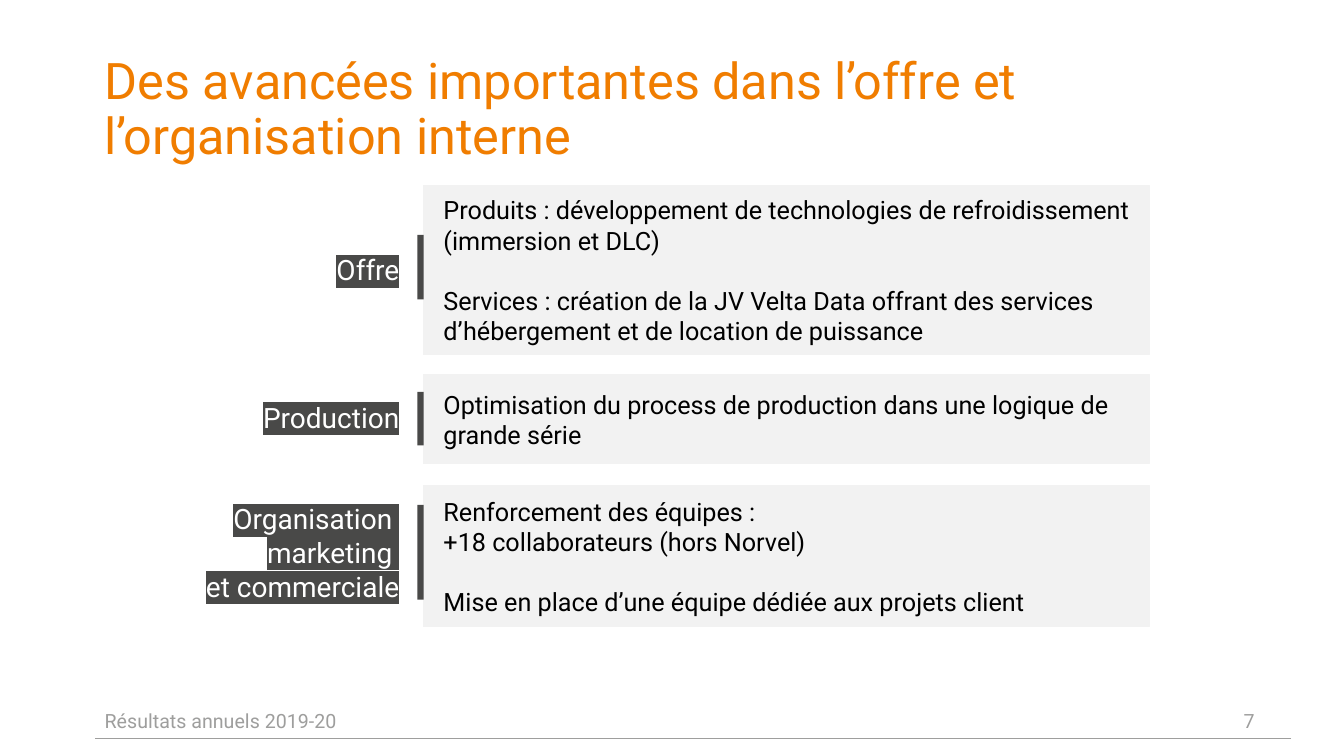
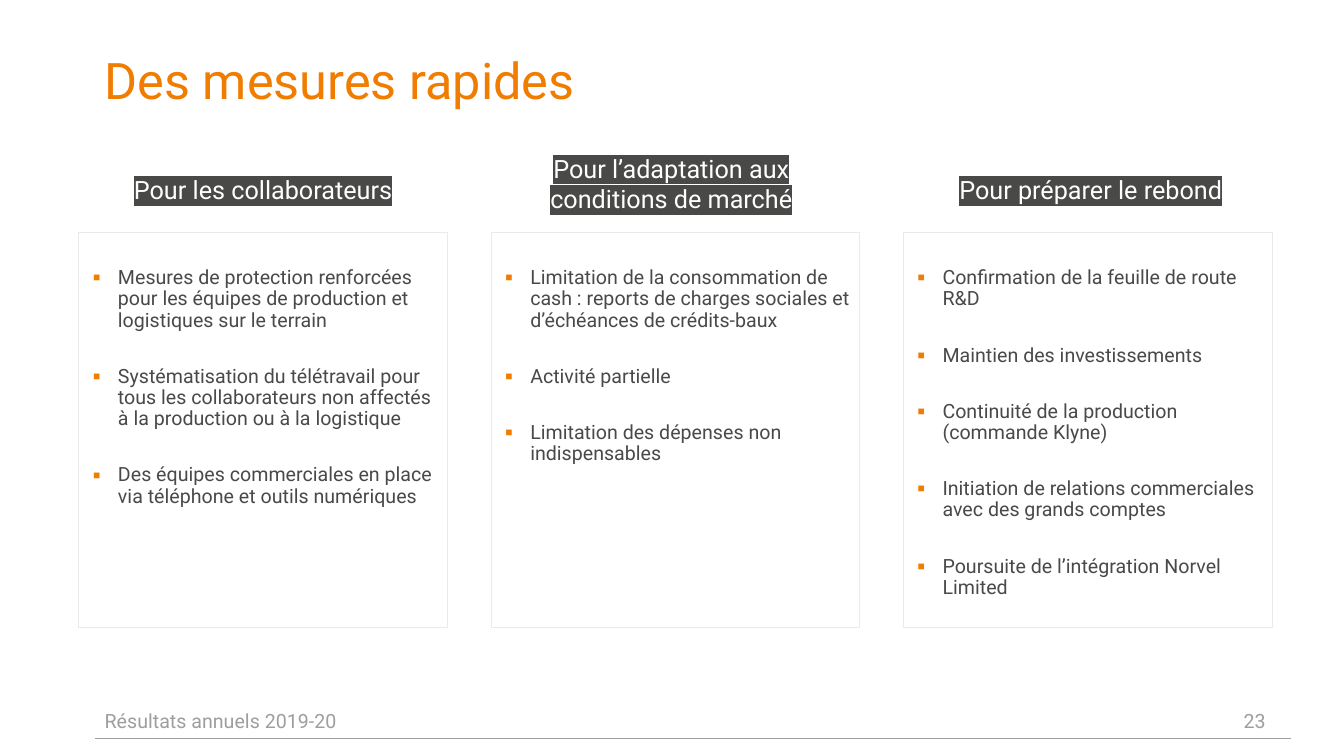
from lxml import etree
from pptx import Presentation
from pptx.dml.color import RGBColor
from pptx.enum.shapes import MSO_CONNECTOR, MSO_SHAPE
from pptx.enum.text import MSO_ANCHOR, PP_ALIGN
from pptx.oxml.ns import qn
from pptx.util import Pt

ORANGE = RGBColor(0xF0, 0x7D, 0x00)
DARK = RGBColor(0x49, 0x49, 0x48)
GREY = RGBColor(0x9E, 0x9E, 0x9D)
PALE = RGBColor(0xF2, 0xF2, 0xF2)
BORDER = RGBColor(0xEA, 0xEA, 0xEB)
WHITE = RGBColor(0xFF, 0xFF, 0xFF)
BLACK = RGBColor(0x00, 0x00, 0x00)
FONT = "Roboto"
FOOTER = "Résultats annuels 2019-20"
RECTANGLE = MSO_SHAPE.RECTANGLE
STRAIGHT = MSO_CONNECTOR.STRAIGHT
TOP, MIDDLE = MSO_ANCHOR.TOP, MSO_ANCHOR.MIDDLE
LEFT, CENTER, RIGHT = PP_ALIGN.LEFT, PP_ALIGN.CENTER, PP_ALIGN.RIGHT
INSETS = (7.2, 3.6, 7.2, 3.6)

ADVANCES = [
    {"label": "Offre", "box": (302.4, 132.5, 518.4, 121),
     "label_offset": 44.6, "mark": (35.3, 46),
     "points": ["Produits : développement de technologies de refroidissement (immersion et DLC)",
                "Services : création de la JV Velta Data offrant des services "
                "d’hébergement et de location de puissance"]},
    {"label": "Production", "box": (302.4, 267.8, 518.4, 63.4),
     "label_offset": 14.4, "mark": (12.2, 38.2),
     "points": ["Optimisation du process de production dans une logique de grande série"]},
    {"label": "Organisation \nmarketing \net commerciale", "box": (302.4, 347, 518.4, 100.8),
     "label_offset": 7.9, "mark": (13.7, 67.7),
     "points": ["Renforcement des équipes : \n+18 collaborateurs (hors Norvel)",
                "Mise en place d’une équipe dédiée aux projets client"]},
]

MEASURES = [
    {"heading": "Pour les collaborateurs", "heading_offset": (29.5, -45.4),
     "points": ["Mesures de protection renforcées pour les équipes de production "
                "et logistiques sur le terrain",
                "Systématisation du télétravail pour tous les collaborateurs non affectés "
                "à la production ou à la logistique",
                "Des équipes commerciales en place via téléphone et outils numériques"]},
    {"heading": "Pour l’adaptation aux conditions de marché", "heading_offset": (26.6, -60.5),
     "points": ["Limitation de la consommation de cash : reports de charges sociales "
                "et d’échéances de crédits-baux",
                "Activité partielle",
                "Limitation des dépenses non indispensables"]},
    {"heading": "Pour préparer le rebond", "heading_offset": (31.7, -45.4),
     "points": ["Confirmation de la feuille de route R&D",
                "Maintien des investissements",
                "Continuité de la production (commande Klyne)",
                "Initiation de relations commerciales avec des grands comptes",
                "Poursuite de l’intégration Norvel Limited"]},
]


def add_panel(slide, box, fill=None, line=None, weight=0.75):
    """Draw a rectangle with an optional fill and outline."""
    panel = slide.shapes.add_shape(RECTANGLE, *map(Pt, box))
    panel.shadow.inherit = False
    if fill is None:
        panel.fill.background()
    else:
        panel.fill.solid()
        panel.fill.fore_color.rgb = fill
    if line is None:
        panel.line.fill.background()
    else:
        panel.line.color.rgb = line
        panel.line.width = Pt(weight)
    return panel


def write(shape, texts, size, color, align=LEFT, anchor=TOP, insets=INSETS,
          gap=0, spacing=None, highlight=None):
    """Fill a shape with paragraphs set apart by a gap."""
    frame = shape.text_frame
    frame.word_wrap = True
    frame.vertical_anchor = anchor
    (frame.margin_left, frame.margin_top,
     frame.margin_right, frame.margin_bottom) = map(Pt, insets)
    for index, text in enumerate(texts):
        paragraph = frame.add_paragraph() if index else frame.paragraphs[0]
        paragraph.alignment = align
        paragraph.space_before = Pt(gap if index else 0)
        if spacing:
            paragraph.line_spacing = spacing
        for number, line in enumerate(text.split("\n")):
            if number:
                paragraph.add_line_break()
            run = paragraph.add_run()
            run.text = line
            run.font.size = Pt(size)
            run.font.name = FONT
            run.font.color.rgb = color
            if highlight is not None:
                mark = etree.Element(qn("a:highlight"))
                etree.SubElement(mark, qn("a:srgbClr"), val=str(highlight))
                run.font.fill._xPr.find(qn("a:solidFill")).addnext(mark)
    return frame


def add_text(slide, box, text, size, color, **style):
    """Place a text box holding one paragraph."""
    write(slide.shapes.add_textbox(*map(Pt, box)), [text], size, color, **style)


def add_bullets(frame):
    """Give every paragraph a hanging orange square."""
    for paragraph in frame.paragraphs:
        properties = paragraph._p.get_or_add_pPr()
        properties.set("marL", str(Pt(21)))
        properties.set("indent", str(-Pt(18)))
        bullet_color = etree.SubElement(properties, qn("a:buClr"))
        etree.SubElement(bullet_color, qn("a:srgbClr"), val=str(ORANGE))
        etree.SubElement(properties, qn("a:buFont"), typeface=FONT)
        etree.SubElement(properties, qn("a:buChar"), char="▪")


def add_frame(deck, title, number):
    """Start a slide with its title, footer and rule."""
    slide = deck.slides.add_slide(deck.slide_layouts[6])
    rule = slide.shapes.add_connector(STRAIGHT, Pt(922.3), Pt(527), Pt(67.7), Pt(527))
    rule.line.color.rgb = GREY
    rule.line.width = Pt(0.25)
    etree.SubElement(rule._element.spPr, qn("a:effectLst"))
    add_text(slide, (67.7, 36.7, 860, 51.8), title, 36, ORANGE, spacing=0.9)
    add_text(slide, (67.7, 500.4, 602.6, 28.8), FOOTER, 14, GREY, anchor=MIDDLE)
    add_text(slide, (881.3, 500.4, 41, 28.8), str(number), 14, GREY, anchor=MIDDLE)
    return slide


def add_advance(slide, advance):
    """Place a grey panel with its label and dark mark on the left."""
    left, top, _, _ = advance["box"]
    mark_offset, mark_height = advance["mark"]
    panel = add_panel(slide, advance["box"], PALE, PALE)
    write(panel, advance["points"], 18, BLACK, anchor=MIDDLE,
          insets=(14.4, 3.6, 2.9, 3.6), gap=21.5)
    label_width = 180
    add_text(slide, (left - 10 - label_width, top + advance["label_offset"], label_width, 31.7),
             advance["label"], 20, WHITE, align=RIGHT, highlight=DARK)
    add_panel(slide, (left - 4.3, top + mark_offset, 4.5, mark_height), DARK)


def add_measure(slide, box, measure):
    """Place a heading above a framed bullet list."""
    left, top, _, _ = box
    shift, rise = measure["heading_offset"]
    add_text(slide, (left + shift, top + rise, 204.5, 28.8), measure["heading"],
             18, WHITE, align=CENTER, highlight=DARK)
    panel = add_panel(slide, box, line=BORDER, weight=0.5)
    add_bullets(write(panel, measure["points"], 14, DARK,
                      insets=(7.2, 25, 7.2, 3.6), gap=25, spacing=0.9))


def main():
    """Build and save both slides."""
    deck = Presentation()
    deck.slide_width, deck.slide_height = Pt(960), Pt(540)
    advances = add_frame(
        deck, "Des avancées importantes dans l’offre et l’organisation interne", 7)
    for advance in ADVANCES:
        add_advance(advances, advance)
    measures = add_frame(deck, "Des mesures rapides", 23)
    for column, measure in enumerate(MEASURES):
        add_measure(measures, (56.2 + column * 294.5, 166.3, 263.5, 282.2), measure)
    deck.save("out.pptx")


if __name__ == "__main__":
    main()
